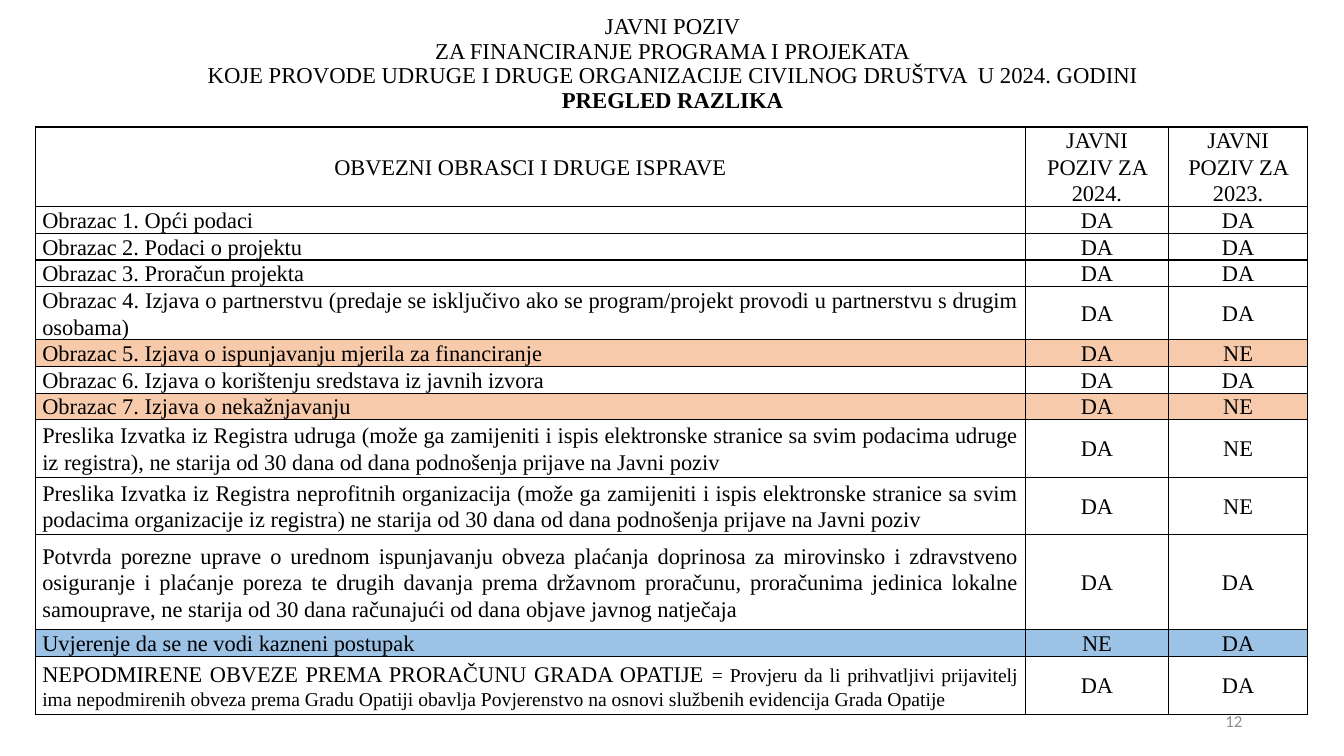
from lxml.etree import SubElement as Sub
from pptx import Presentation
from pptx.dml.color import RGBColor as RGB
from pptx.enum.text import MSO_ANCHOR as Anchor, PP_ALIGN as Align
from pptx.oxml.ns import qn
from pptx.util import Inches, Pt

BLACK = RGB(0, 0, 0)
GREY = RGB(0x8C, 0x8C, 0x8C)
ORANGE = RGB(0xF7, 0xCA, 0xAC)
BLUE = RGB(0x9C, 0xC2, 0xE5)
SERIF = "Times New Roman"
PITCH = Pt(19)
LINE = PITCH.inches

TITLE = [
    "JAVNI POZIV",
    "ZA FINANCIRANJE PROGRAMA I PROJEKATA",
    "KOJE PROVODE UDRUGE I DRUGE ORGANIZACIJE CIVILNOG DRUŠTVA  U 2024. GODINI",
    "PREGLED RAZLIKA",
]
COLS = [9.82, 1.42, 1.38]
# height, fill, form or document, 2024, 2023
ROWS = [
    (3 * LINE, None, "OBVEZNI OBRASCI I DRUGE ISPRAVE",
     "JAVNI POZIV ZA 2024.", "JAVNI POZIV ZA 2023."),
    (LINE, None, "Obrazac 1. Opći podaci", "DA", "DA"),
    (LINE, None, "Obrazac 2. Podaci o projektu", "DA", "DA"),
    (LINE, None, "Obrazac 3. Proračun projekta", "DA", "DA"),
    (2 * LINE, None, "Obrazac 4. Izjava o partnerstvu (predaje se isključivo ako se "
     "program/projekt provodi u partnerstvu s drugim osobama)", "DA", "DA"),
    (LINE, ORANGE, "Obrazac 5. Izjava o ispunjavanju mjerila za financiranje", "DA", "NE"),
    (LINE, None, "Obrazac 6. Izjava o korištenju sredstava iz javnih izvora", "DA", "DA"),
    (LINE, ORANGE, "Obrazac 7. Izjava o nekažnjavanju", "DA", "NE"),
    (0.57, None, "Preslika Izvatka iz Registra udruga (može ga zamijeniti i ispis "
     "elektronske stranice sa svim podacima udruge iz registra), ne starija od 30 dana "
     "od dana podnošenja prijave na Javni poziv", "DA", "NE"),
    (0.57, None, "Preslika Izvatka iz Registra neprofitnih organizacija (može ga "
     "zamijeniti i ispis elektronske stranice sa svim podacima organizacije iz registra) "
     "ne starija od 30 dana od dana podnošenja prijave na Javni poziv", "DA", "NE"),
    (0.94, None, "Potvrda porezne uprave o urednom ispunjavanju obveza plaćanja "
     "doprinosa za mirovinsko i zdravstveno osiguranje i plaćanje poreza te drugih davanja "
     "prema državnom proračunu, proračunima jedinica lokalne samouprave, ne starija od "
     "30 dana računajući od dana objave javnog natječaja", "DA", "DA"),
    (LINE, BLUE, "Uvjerenje da se ne vodi kazneni postupak", "NE", "DA"),
    (0.58, None, "NEPODMIRENE OBVEZE PREMA PRORAČUNU GRADA OPATIJE ", "DA", "DA"),
]
NOTE = ("= Provjeru da li prihvatljivi prijavitelj ima nepodmirenih obveza prema Gradu "
        "Opatiji obavlja Povjerenstvo na osnovi službenih evidencija Grada Opatije")


def write(para, text, size, face=SERIF, color=BLACK, bold=False):
    run = para.add_run()
    run.text = text
    for key, val in {"name": face, "size": Pt(size), "bold": bold}.items():
        setattr(run.font, key, val)
    run.font.color.rgb = color


def frame(slide, box, anchor, inset):
    """Add a wrapping text box and return its text frame."""
    text = slide.shapes.add_textbox(*map(Inches, box)).text_frame
    look = {"word_wrap": True, "vertical_anchor": anchor,
            "margin_top": Inches(inset), "margin_bottom": Inches(inset)}
    for key, val in look.items():
        setattr(text, key, val)
    return text


deck = Presentation()
deck.slide_width, deck.slide_height = Inches(13.33), Inches(7.5)
slide = deck.slides.add_slide(deck.slide_layouts[6])

# Title
head = frame(slide, (0.27, 0.15, 12.8, 1.06), Anchor.TOP, 0)
for i, line in enumerate(TITLE):
    para = head.add_paragraph() if i else head.paragraphs[0]
    para.alignment = Align.CENTER
    para.line_spacing = 0.9
    write(para, line, 16.2, bold=line == TITLE[-1])

# Table of forms
high = sum(row[0] for row in ROWS)
table = slide.shapes.add_table(
    len(ROWS), len(COLS), Inches(0.35), Inches(1.26),
    Inches(sum(COLS)), Inches(high)).table
table.first_row = table.horz_banding = False
for col, width in zip(table.columns, COLS):
    col.width = Inches(width)

CELL = {"vertical_anchor": Anchor.MIDDLE, "margin_left": Inches(0.07),
        "margin_right": Inches(0.07), "margin_top": 0, "margin_bottom": 0}
for r, (height, fill, *texts) in enumerate(ROWS):
    table.rows[r].height = Inches(height)
    tight = height in (LINE, 2 * LINE, 3 * LINE)
    for c, text in enumerate(texts):
        cell = table.cell(r, c)
        for key, val in CELL.items():
            setattr(cell, key, val)
        para = cell.text_frame.paragraphs[0]
        para.alignment = Align.JUSTIFY if r and not c else Align.CENTER
        para.line_spacing = PITCH if tight else 1.07
        para.space_after = Pt(8)
        write(para, text, 16)
        props = cell._tc.get_or_add_tcPr()
        for side in ("lnL", "lnR", "lnT", "lnB"):
            edge = Sub(props, qn("a:" + side), w=str(Pt(1)))
            paint = Sub(edge, qn("a:solidFill"))
            Sub(paint, qn("a:srgbClr"), val=str(BLACK))
        if fill:
            cell.fill.solid()
            cell.fill.fore_color.rgb = fill
        else:
            cell.fill.background()
write(table.cell(len(ROWS) - 1, 0).text_frame.paragraphs[0], NOTE, 14)

# Slide number
foot = frame(slide, (9.42, 6.95, 3, 0.4), Anchor.MIDDLE, 0.05).paragraphs[0]
foot.alignment = Align.RIGHT
write(foot, "12", 12, "Calibri", GREY)

deck.save("out.pptx")
